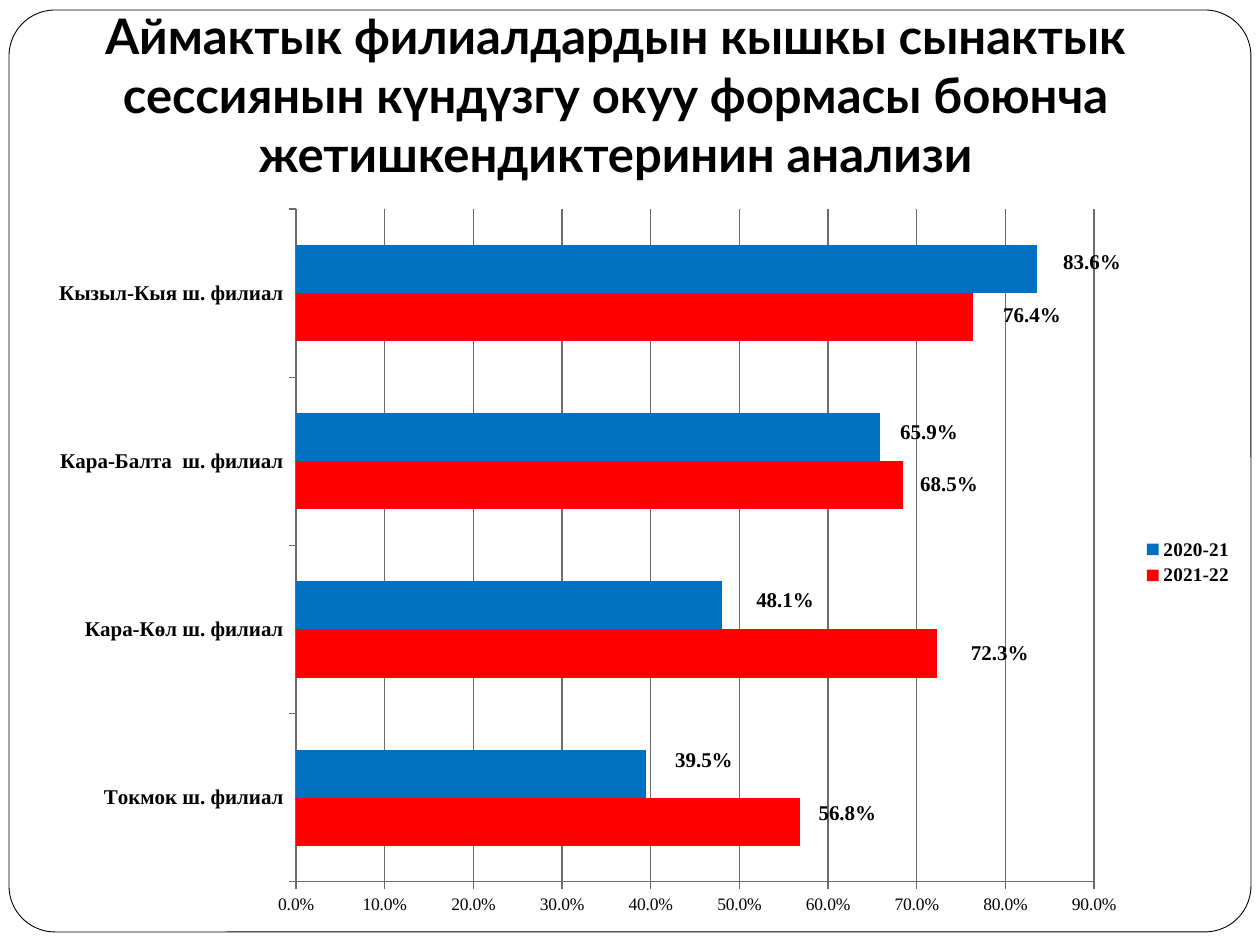
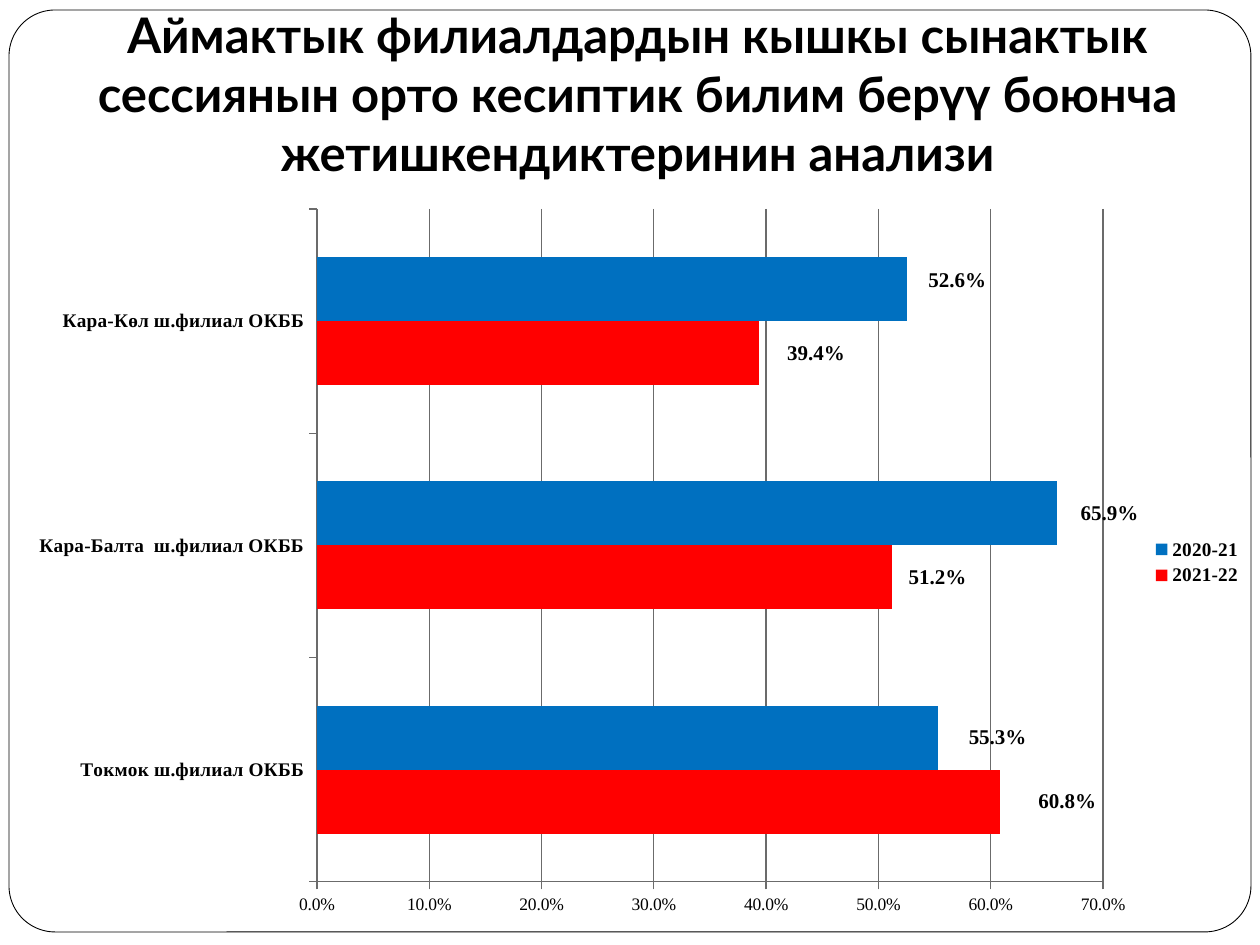
"""Build two slides that compare winter exam results by branch and year."""
from math import ceil

from lxml.etree import SubElement as Sub
from pptx import Presentation as Deck
from pptx.chart.data import CategoryChartData as Data
from pptx.dml.color import RGBColor as Rgb
from pptx.enum.chart import XL_CHART_TYPE as Kind, XL_LABEL_POSITION as Spot
from pptx.enum.chart import XL_LEGEND_POSITION as Side, XL_TICK_MARK as Tick
from pptx.enum.shapes import MSO_SHAPE as Form
from pptx.enum.text import MSO_ANCHOR as Anchor, MSO_AUTO_SIZE as Auto, PP_ALIGN as Align
from pptx.oxml.ns import qn
from pptx.util import Pt

TITLE = ("Аймактык филиалдардын кышкы сынактык сессиянын {} "
         "боюнча жетишкендиктеринин анализи")
YEARS = ("2021-22", "2020-21")

# Each branch holds one (value, label gap, label rise) per year.
SLIDES = [
    {"topic": "күндүзгу окуу формасы",
     "head": (15, 55, 1201, 140), "chart": (35, 1211), "plot": (296, 798),
     "size": 12,
     "branches": {
         "Токмок ш. филиал": ((0.568, 19, 8), (0.395, 29, 13)),
         "Кара-Көл ш. филиал": ((0.723, 34, 0), (0.481, 34, 5)),
         "Кара-Балта  ш. филиал": ((0.685, 17, 1), (0.659, 20, 5)),
         "Кызыл-Кыя ш. филиал": ((0.764, 30, 2), (0.836, 26, 7))}},
    {"topic": "орто кесиптик билим берүү",
     "head": (15, 37, 1245, 157), "chart": (15, 1240), "plot": (317, 786),
     "size": 11,
     "branches": {
         "Токмок ш.филиал ОКББ": ((0.608, 39, 0), (0.553, 31, 0)),
         "Кара-Балта  ш.филиал ОКББ": ((0.512, 17, 0), (0.659, 24, 0)),
         "Кара-Көл ш.филиал ОКББ": ((0.394, 28, 0), (0.526, 21, 9))}},
]

INK = {"text": "000000", "paper": "FFFFFF", "grid": "6B6B6B",
       "2021-22": "FF0000", "2020-21": "0070C0"}
HEAD, BODY = "Lato", "Times New Roman"
RATE, STEP = "0.0%", 0.1
SCALE = 914400 / 126
PAGE = (1260, 945)
FRAME = (9, 10, 1242, 922)
CHART_TOP, CHART_HIGH = 195, 735
PLOT_TOP, PLOT_HIGH = 209, 673
TAG_GAP = 5


def px(*vals):
    return [round(v * SCALE) for v in vals]


def tint(name):
    return Rgb.from_string(INK[name])


def paint(fill, name):
    fill.solid()
    fill.fore_color.rgb = tint(name)


def stroke(line, name, width):
    line.color.rgb = tint(name)
    line.width = Pt(width)


def style(font, size, bold=False, face=BODY):
    font.name, font.size, font.bold = face, Pt(size), bold
    font.color.rgb = tint("text")


def put(box, text, align=Align.CENTER, **fmt):
    para = box.paragraphs[0]
    para.alignment = align
    run = para.add_run()
    run.text = text
    style(run.font, **fmt)


def place(owner, index, **vals):
    outer = Sub(owner, qn("c:layout"))
    inner = Sub(outer, qn("c:manualLayout"))
    for key, val in vals.items():
        Sub(inner, qn("c:" + key)).set("val", str(val))
    owner.insert(index, outer)


def border(deck, slide):
    box = slide.shapes.add_shape(Form.ROUNDED_RECTANGLE, *px(*FRAME))
    box.adjustments[0] = 0.05
    box.shadow.inherit = False
    paint(box.fill, "paper")
    stroke(box.line, "text", 0.5)
    box.element.nvSpPr.cNvPr.set("id", "99")
    deck.slide_master.shapes.element.insert(2, box.element)


def title(slide, page):
    head = slide.shapes.title
    head.left, head.top, head.width, head.height = px(*page["head"])
    box = head.text_frame
    box.auto_size, box.word_wrap = Auto.NONE, True
    box.vertical_anchor = Anchor.BOTTOM
    (box.margin_left, box.margin_top,
     box.margin_right, box.margin_bottom) = px(13, 6, 13, 13)
    put(box, TITLE.format(page["topic"]), size=28, bold=True, face=HEAD)


def fill_data(branches):
    data = Data(number_format=RATE)
    data.categories = list(branches)
    for year, cells in zip(YEARS, zip(*branches.values())):
        data.add_series(year, [val for val, gap, rise in cells])
    return data


def set_axes(chart, page):
    cat, val = chart.category_axis, chart.value_axis
    for axis, size, bold in ((cat, page["size"], True), (val, 10, False)):
        axis.major_tick_mark, axis.minor_tick_mark = Tick.OUTSIDE, Tick.NONE
        stroke(axis.format.line, "grid", 0.75)
        style(axis.tick_labels.font, size, bold)
    peak = max(cell[0] for pair in page["branches"].values() for cell in pair)
    val.minimum_scale, val.major_unit = 0, STEP
    val.maximum_scale = round(ceil(peak / STEP) * STEP, 1)
    val.tick_labels.number_format = RATE
    val.tick_labels.number_format_is_linked = False
    cat.has_major_gridlines, val.has_major_gridlines = False, True
    stroke(val.major_gridlines.format.line, "grid", 0.75)


def set_tags(row, cells, wide):
    tags = row.data_labels
    tags.show_value = True
    tags.number_format, tags.number_format_is_linked = RATE, False
    tags._element.find(qn("c:showLeaderLines")).set("val", "0")
    for i, (val, gap, rise) in enumerate(cells):
        tag = row.points[i].data_label
        tag.position = Spot.OUTSIDE_END
        style(tag.font, 12, True)
        place(tags._element.findall(qn("c:dLbl"))[i], 1,
              x=round((gap - TAG_GAP) / wide, 4),
              y=round(-rise / CHART_HIGH, 4))


def set_bars(plot, page):
    plot.gap_width, plot.overlap, plot.vary_by_categories = 150, 0, False
    for row, cells in zip(plot.series, zip(*page["branches"].values())):
        paint(row.format.fill, row.name)
        set_tags(row, cells, page["chart"][1])


def set_legend(chart):
    chart.has_legend = True
    chart.legend.position = Side.RIGHT
    chart.legend.include_in_layout = False
    style(chart.legend.font, 11, True)


def set_plot(chart, page):
    (left, wide), (x, span) = page["chart"], page["plot"]
    area = chart._chartSpace.chart.plotArea
    for old in area.findall(qn("c:layout")):
        area.remove(old)
    place(area, 0, layoutTarget="inner", xMode="edge", yMode="edge",
          x=round((x - left) / wide, 4),
          y=round((PLOT_TOP - CHART_TOP) / CHART_HIGH, 4),
          w=round(span / wide, 4),
          h=round(PLOT_HIGH / CHART_HIGH, 4))


def graph(slide, page):
    left, wide = page["chart"]
    spot = px(left, CHART_TOP, wide, CHART_HIGH)
    data = fill_data(page["branches"])
    chart = slide.shapes.add_chart(Kind.BAR_CLUSTERED, *spot, data).chart
    chart.has_title = False
    style(chart.font, 10)
    set_legend(chart)
    set_axes(chart, page)
    set_bars(chart.plots[0], page)
    set_plot(chart, page)


def main():
    deck = Deck()
    deck.slide_width, deck.slide_height = px(*PAGE)
    only = deck.slide_layouts.get_by_name("Title Only")
    for page in SLIDES:
        slide = deck.slides.add_slide(only)
        title(slide, page)
        graph(slide, page)
    border(deck, deck.slides[0])
    deck.save("out.pptx")


if __name__ == "__main__":
    main()
